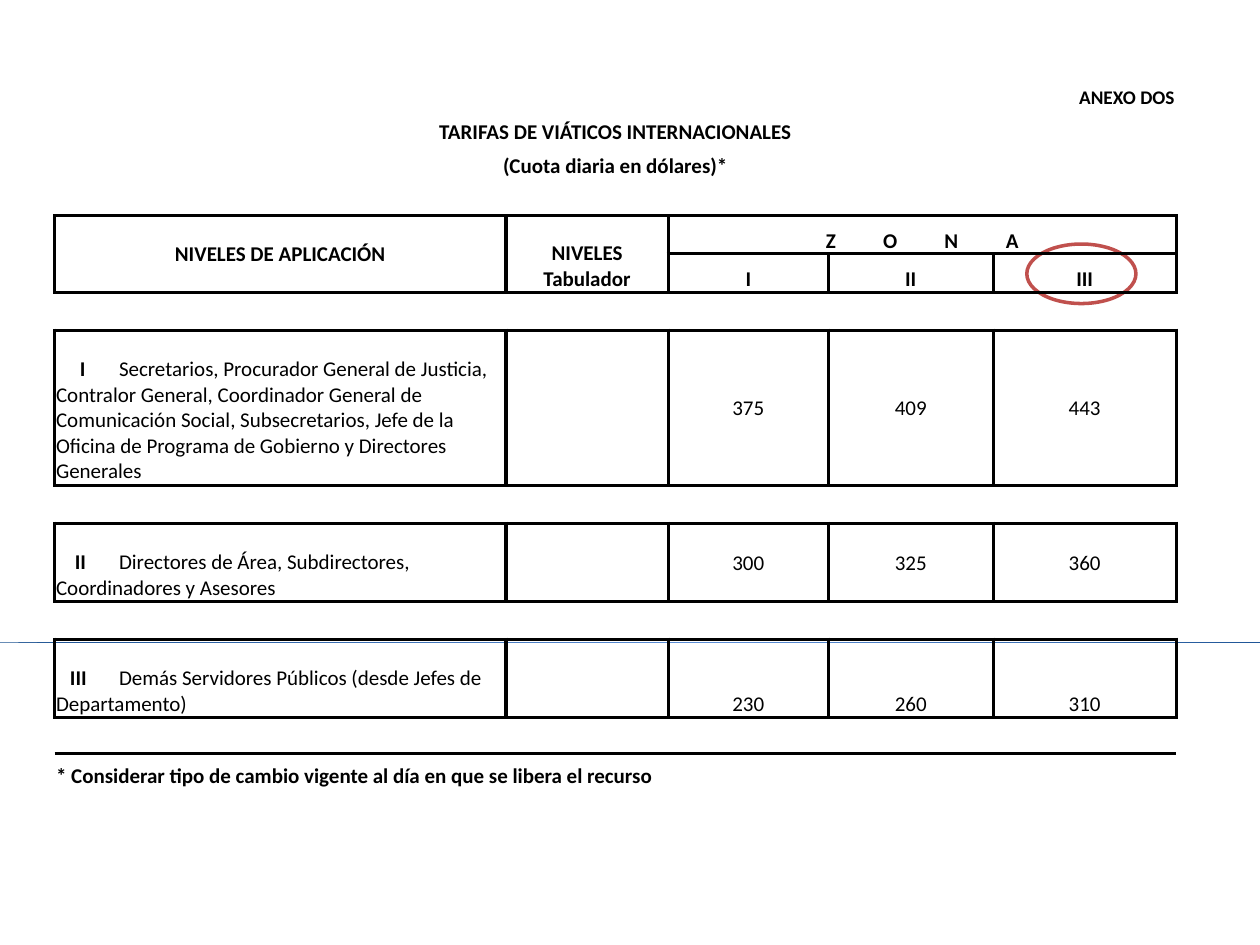
from lxml.etree import SubElement
from pptx import Presentation
from pptx.dml.color import RGBColor
from pptx.enum.shapes import MSO_SHAPE as Kind
from pptx.enum.text import MSO_ANCHOR as Anchor, PP_ALIGN as Align
from pptx.oxml.ns import qn
from pptx.util import Cm, Pt

COLS = [2.89, 2.89, 3.32, 3.27, 3.23, 3.32, 3.69]
ROWS = [0.7, 0.7, 0.7, 0.73, 0.77, 0.77, 0.77, 3.13, 0.76, 1.57, 0.77, 1.57, 0.74, 0.71]
HEAD = (4, 5)
# row, numeral, its indent, tab stop, description, rates, anchor of the rates
LEVELS = [
    (7, "I", 0.48, 1.17,
     "Secretarios, Procurador General de Justicia, Contralor General, "
     "Coordinador General de Comunicación Social, Subsecretarios, Jefe de la "
     "Oficina de Programa de Gobierno y Directores Generales",
     (375, 409, 443), Anchor.MIDDLE),
    (9, "II", 0.38, 0.99,
     "Directores de Área, Subdirectores, Coordinadores y Asesores",
     (300, 325, 360), Anchor.MIDDLE),
    (11, "III", 0.28, 0.91,
     "Demás Servidores Públicos (desde Jefes de Departamento)",
     (230, 260, 310), Anchor.BOTTOM),
]
BOXED = {*HEAD, *(level[0] for level in LEVELS)}
NO_GRID = "{2D5ABB26-0587-4C30-8999-92F81FD0307C}"


def color(code):
    return RGBColor.from_string(code)


def add_run(para, text, size=12, bold=False, gap=0):
    run = para.add_run()
    run.text = text
    font = run.font
    font.name, font.size, font.bold = "Calibri", Pt(size), bold
    font.color.rgb = color("000000")
    if gap:
        font._element.set("spc", str(gap))
    return run


class Sheet:
    """Holds the slide, its table and the shared style."""

    def __init__(self, slide):
        self.slide = slide
        self.ink = "000000"
        self.edge = Pt(2)

    def shape(self, kind, left, top, width, height):
        item = self.slide.shapes.add_shape(kind, Cm(left), Cm(top), Cm(width), Cm(height))
        item.shadow.inherit = False
        return item

    def rule(self, top):
        """Hairline wedge across the slide, shaded along its length."""
        wedge = self.shape(Kind.RIGHT_TRIANGLE, 0, top, 25.43, 0.01)
        wedge.line.fill.background()
        wedge.fill.gradient()
        stops = wedge._element.spPr.find(qn("a:gradFill")).find(qn("a:gsLst"))
        for stop in list(stops):
            stops.remove(stop)
        for place, code in (0, "1A5090"), (55, "5F91D9"), (100, "1A5090"):
            stop = SubElement(stops, qn("a:gs"), pos=str(place * 1000))
            SubElement(stop, qn("a:srgbClr"), val=code)
        wedge.fill.gradient_angle = 310

    def ring(self, left, top, width, height):
        oval = self.shape(Kind.OVAL, left, top, width, height)
        oval.fill.solid()
        oval.fill.fore_color.rgb = color("FFFFFF")
        oval.line.color.rgb = color("C0504D")
        oval.line.width = self.edge

    def grid(self, left, top):
        frame = self.slide.shapes.add_table(
            len(ROWS), len(COLS), Cm(left), Cm(top), Cm(sum(COLS)), Cm(sum(ROWS)))
        self.table = table = frame.table
        table.first_row = table.horz_banding = False
        table._tbl.tblPr.find(qn("a:tableStyleId")).text = NO_GRID
        for col, width in zip(table.columns, COLS):
            col.width = Cm(width)
        for num, height in enumerate(ROWS):
            table.rows[num].height = Cm(height)
            for cell in table.rows[num].cells:
                self.frame_cell(cell, num)

    def frame_cell(self, cell, num):
        cell.margin_left = cell.margin_right = cell.margin_top = Cm(0.03)
        cell.margin_bottom = 0
        sides = {"L": num in BOXED, "R": num in BOXED,
                 "T": {num, num - 1} & BOXED, "B": {num, num + 1} & BOXED}
        props = cell._tc.get_or_add_tcPr()
        for side, drawn in sides.items():
            if drawn:
                line = SubElement(props, qn("a:ln" + side), w=str(self.edge))
                fill = SubElement(line, qn("a:solidFill"))
                SubElement(fill, qn("a:srgbClr"), val=self.ink)
        cell.fill.background()
        # keeps empty cells from stretching their row
        SubElement(cell.text_frame.paragraphs[0]._p, qn("a:endParaRPr"), sz="1100")

    def cell(self, row, col, down=1, across=1, align=Align.CENTER, anchor=Anchor.BOTTOM):
        """Merges the span and gives back its first paragraph."""
        cell = self.table.cell(row, col)
        if down * across > 1:
            cell.merge(self.table.cell(row + down - 1, col + across - 1))
        cell.vertical_anchor = anchor
        para = cell.text_frame.paragraphs[0]
        para.alignment = align
        return para

    def level(self, row, numeral, indent, stop, text, rates, anchor):
        para = self.cell(row, 0, across=3, align=Align.LEFT, anchor=Anchor.TOP)
        self.table.cell(row, 0).margin_top = Cm(0.53)
        props = para._p.get_or_add_pPr()
        props.set("marL", "0")
        props.set("indent", str(Cm(indent)))
        tabs = SubElement(props, qn("a:tabLst"))
        SubElement(tabs, qn("a:tab"), pos=str(Cm(stop)), algn="l")
        add_run(para, numeral + "\t", bold=True)
        add_run(para, text)
        for col, rate in enumerate(rates, 4):
            add_run(self.cell(row, col, anchor=anchor), str(rate))


def main():
    deck = Presentation()
    deck.slide_width, deck.slide_height = Cm(25.4), Cm(19.05)
    sheet = Sheet(deck.slides.add_slide(deck.slide_layouts[6]))
    sheet.rule(12.95)
    sheet.ring(20.7, 4.92, 2.2, 1.2)
    sheet.grid(1.1, 1.52)

    add_run(sheet.cell(0, 6, align=Align.RIGHT), "ANEXO DOS", size=11, bold=True)
    titles = "TARIFAS DE VIÁTICOS INTERNACIONALES", "(Cuota diaria en dólares)*"
    for row, text in enumerate(titles, 1):
        add_run(sheet.cell(row, 0, across=7), text, bold=True)

    top, low = HEAD
    add_run(sheet.cell(top, 0, down=2, across=3, anchor=Anchor.MIDDLE),
            "NIVELES DE APLICACIÓN", bold=True)
    add_run(sheet.cell(top, 3, down=2), "NIVELES Tabulador", bold=True)
    zone = sheet.cell(top, 4, across=3)
    add_run(zone, "Z O N ", bold=True, gap=1215)
    add_run(zone, "A", bold=True)
    for col, text in enumerate(("I", "II", "III"), 4):
        add_run(sheet.cell(low, col), text, bold=True)

    for level in LEVELS:
        sheet.level(*level)
    add_run(sheet.cell(13, 0, across=5, align=Align.LEFT),
            "* Considerar tipo de cambio vigente al día en que se libera el recurso",
            bold=True)
    deck.save("out.pptx")


if __name__ == "__main__":
    main()
